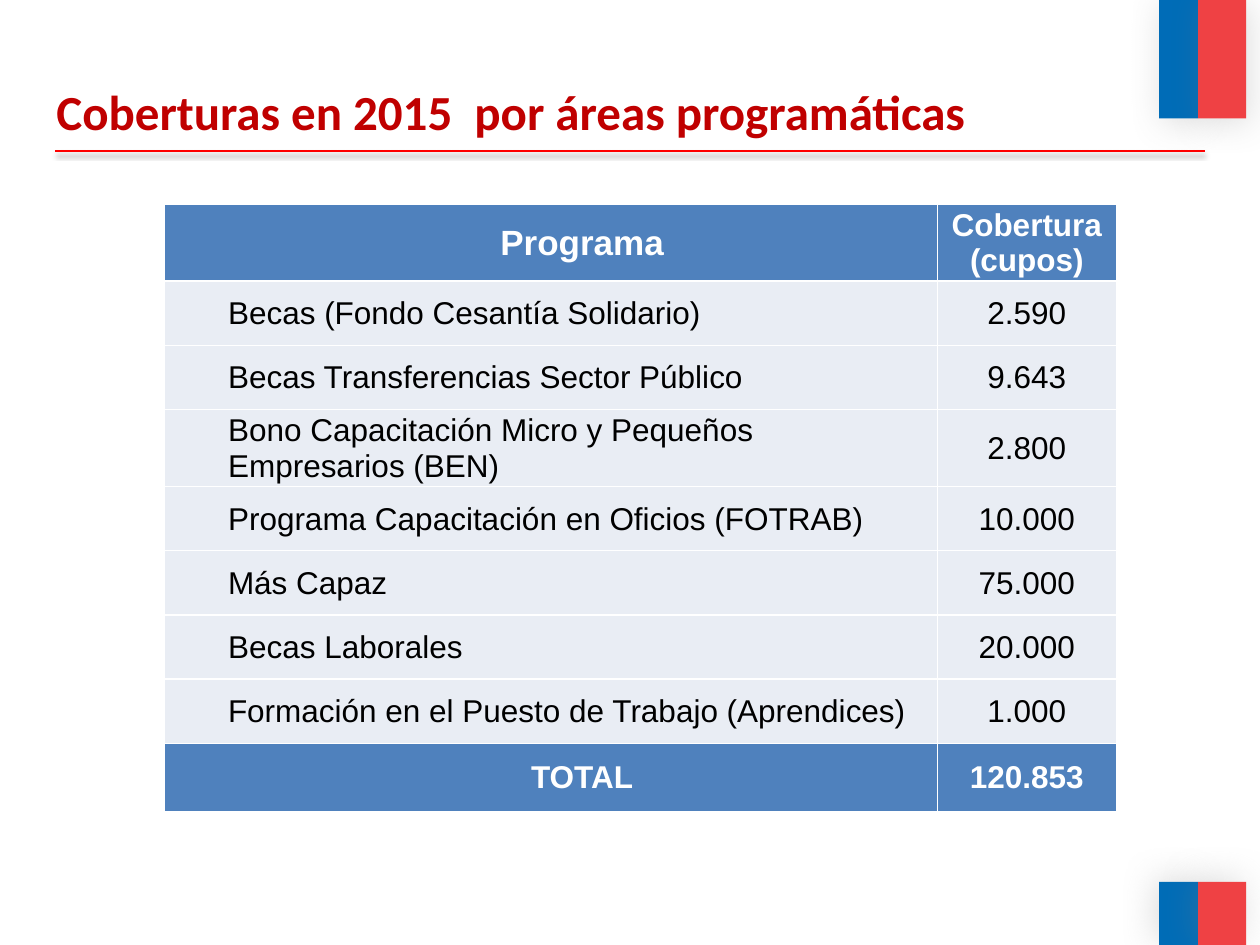
from pptx import Presentation
from pptx import util as u
from pptx.dml.color import RGBColor
from pptx.enum import shapes, text
from pptx.oxml import parse_xml
from pptx.oxml.ns import nsdecls

TITLE = "Coberturas en 2015  por áreas programáticas"
HEAD = ("Programa", "Cobertura\n(cupos)")
ROWS = [
    ("Becas (Fondo Cesantía Solidario)", "2.590"),
    ("Becas Transferencias Sector Público", "9.643"),
    ("Bono Capacitación Micro y Pequeños Empresarios (BEN)", "2.800"),
    ("Programa Capacitación en Oficios (FOTRAB)", "10.000"),
    ("Más Capaz", "75.000"),
    ("Becas Laborales", "20.000"),
    ("Formación en el Puesto de Trabajo (Aprendices)", "1.000"),
]
TOTAL = ("TOTAL", "120.853")
COLS = (6.14, 1.42)
BANDS = [(0, 0.94, 45), (7, 0.5, 215)]
STRIPES = [(9.2, 0.31, "006CB7"), (9.51, 0.38, "EF4144")]
BLUE, PALE, WHITE, BLACK = "4F81BD", "E9EDF4", "FFFFFF", "000000"


def rgb(code):
    return RGBColor.from_string(code)


def fill(item, code):
    item.fill.solid()
    item.fill.fore_color.rgb = rgb(code)


def shade(shape, code, alpha, blur, dist, angle):
    shape._element.spPr.append(parse_xml(
        f'<a:effectLst {nsdecls("a")}><a:outerShdw blurRad="{u.Pt(blur)}" '
        f'dist="{u.Pt(dist)}" dir="{angle * 60000}" algn="tl" rotWithShape="0">'
        f'<a:srgbClr val="{code}"><a:alpha val="{alpha * 1000}"/></a:srgbClr>'
        '</a:outerShdw></a:effectLst>'))


def write(para, words, size, code, bold, face="Arial"):
    run = para.add_run()
    run.text = words
    font = run.font
    font.name, font.size, font.bold = face, u.Pt(size), bold
    font.color.rgb = rgb(code)


def edge(cell):
    props = cell._tc.get_or_add_tcPr()
    for spot, side in enumerate(("lnL", "lnR", "lnT", "lnB")):
        props.insert(spot, parse_xml(
            f'<a:{side} {nsdecls("a")} w="{u.Pt(1)}"><a:solidFill>'
            f'<a:srgbClr val="{WHITE}"/></a:solidFill></a:{side}>'))


def draw_cell(cell, words, col, strong, size):
    fill(cell, BLUE if strong else PALE)
    edge(cell)
    cell.vertical_anchor = text.MSO_ANCHOR.MIDDLE
    cell.margin_left = cell.margin_right = cell.margin_top = u.Inches(0.01)
    cell.margin_bottom = 0
    frame = cell.text_frame
    for num, line in enumerate(words.split("\n")):
        para = frame.add_paragraph() if num else frame.paragraphs[0]
        centre = strong or col == 1
        para.alignment = text.PP_ALIGN.CENTER if centre else text.PP_ALIGN.LEFT
        if col == 0:
            para.level = 1
            props = para._p.get_or_add_pPr()
            props.set("marL", str(u.Inches(0.5)))
            props.set("indent", "0")
        write(para, line, size, WHITE if strong else BLACK, strong)


def main():
    deck = Presentation()
    deck.slide_width, deck.slide_height = u.Inches(10), u.Inches(7.5)
    slide = deck.slides.add_slide(deck.slide_layouts[6])
    items = slide.shapes

    for top, high, angle in BANDS:
        for left, wide, code in STRIPES:
            box = items.add_shape(shapes.MSO_SHAPE.RECTANGLE, u.Inches(left),
                                  u.Inches(top), u.Inches(wide), u.Inches(high))
            fill(box, code)
            box.line.fill.background()
            shade(box, "808080", 25, 20, 3, angle)

    rule = items.add_connector(shapes.MSO_CONNECTOR.STRAIGHT, u.Inches(0.44),
                               u.Inches(1.2), u.Inches(9.56), u.Inches(1.2))
    rule.line.color.rgb = rgb("FF0000")
    rule.line.width = u.Pt(1)
    shade(rule, BLACK, 38, 3.1, 1.6, 90)

    title = items.add_textbox(u.Inches(0.35), u.Inches(0.6),
                              u.Inches(10), u.Inches(0.82))
    title.text_frame.word_wrap = True
    para = title.text_frame.paragraphs[0]
    para.space_before = u.Pt(5.6)
    write(para, TITLE, 28, "C00000", True, "Calibri")

    rows = [HEAD, *ROWS, TOTAL]
    last = len(rows) - 1
    table = items.add_table(len(rows), 2, u.Inches(1.3), u.Inches(1.62),
                            u.Inches(sum(COLS)), u.Inches(4.62)).table
    for col, wide in enumerate(COLS):
        table.columns[col].width = u.Inches(wide)
    for row, pair in enumerate(rows):
        table.rows[row].height = u.Inches(0.54 if row == last else 0.51)
        for col, words in enumerate(pair):
            size = 20 if (row, col) == (0, 0) else 18
            draw_cell(table.cell(row, col), words, col, row in (0, last), size)

    deck.save("out.pptx")


if __name__ == "__main__":
    main()
